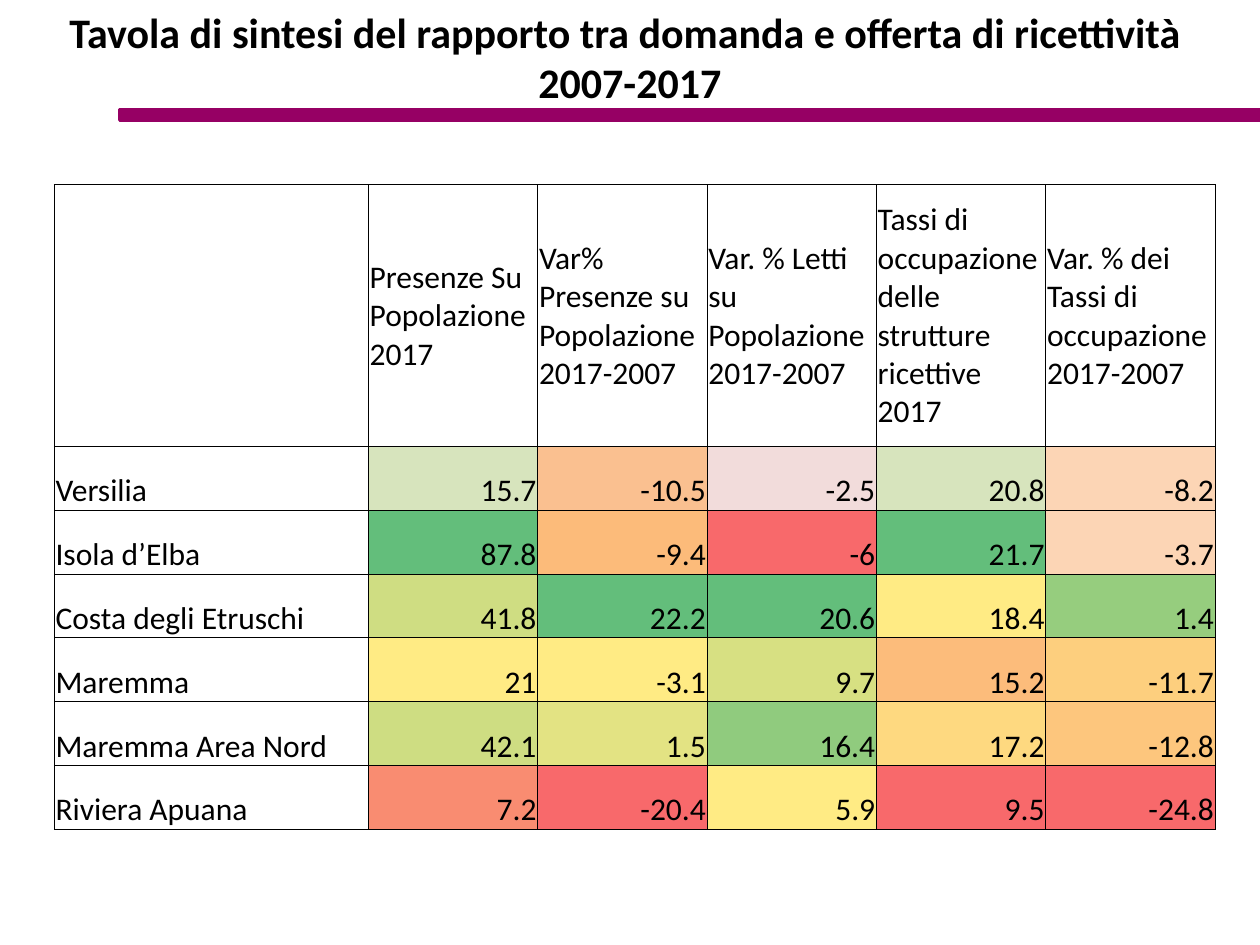
from dataclasses import dataclass

from lxml.etree import SubElement
from pptx import Presentation
from pptx.dml.color import RGBColor
from pptx.enum.shapes import MSO_SHAPE
from pptx.enum.text import MSO_ANCHOR, PP_ALIGN
from pptx.oxml.ns import qn
from pptx.util import Pt


@dataclass(frozen=True)
class Theme:
    font: str = "Calibri"
    ink: str = "000000"
    accent: str = "960064"
    title_size: int = 24
    body_size: int = 18
    border: float = 0.5
    accent_line: float = 2


HEADINGS = [
    "",
    "Presenze Su Popolazione 2017",
    "Var% Presenze su Popolazione 2017-2007",
    "Var. % Letti su Popolazione 2017-2007",
    "Tassi di occupazione delle strutture ricettive 2017",
    "Var. % dei Tassi di occupazione 2017-2007",
]

AREAS = {
    "Versilia": [("15.7", "D7E4BD"), ("-10.5", "FAC090"), ("-2.5", "F2DCDB"),
                 ("20.8", "D7E4BD"), ("-8.2", "FCD5B5")],
    "Isola d’Elba": [("87.8", "63BE7B"), ("-9.4", "FCBB7A"), ("-6", "F8696B"),
                     ("21.7", "63BE7B"), ("-3.7", "FCD5B5")],
    "Costa degli Etruschi": [("41.8", "CFDD82"), ("22.2", "63BE7B"), ("20.6", "63BE7B"),
                             ("18.4", "FFEB84"), ("1.4", "96CD7E")],
    "Maremma": [("21", "FFEB84"), ("-3.1", "FFEB84"), ("9.7", "D7E082"),
                ("15.2", "FCBC7B"), ("-11.7", "FDCF7E")],
    "Maremma Area Nord": [("42.1", "CEDD82"), ("1.5", "E3E383"), ("16.4", "90CB7E"),
                          ("17.2", "FED980"), ("-12.8", "FDC67D")],
    "Riviera Apuana": [("7.2", "F98C71"), ("-20.4", "F8696B"), ("5.9", "FFEB84"),
                       ("9.5", "F8696B"), ("-24.8", "F8696B")],
}


def write(frame, text, *, font, size, color, bold=False, align=PP_ALIGN.LEFT):
    for index, line in enumerate(text.split("\n")):
        paragraph = frame.add_paragraph() if index else frame.paragraphs[0]
        paragraph.alignment = align
        paragraph.font.size = Pt(size)
        if not line:
            continue
        run = paragraph.add_run()
        run.text = line
        run.font.name = font
        run.font.size = Pt(size)
        run.font.bold = bold
        run.font.color.rgb = RGBColor.from_string(color)


class SummarySlide:
    def __init__(self, slide, theme):
        self.slide = slide
        self.theme = theme

    def bar(self, left, top, width, height):
        rule = self.slide.shapes.add_shape(
            MSO_SHAPE.RECTANGLE, Pt(left), Pt(top), Pt(width), Pt(height))
        rule.shadow.inherit = False
        accent = RGBColor.from_string(self.theme.accent)
        rule.fill.solid()
        rule.fill.fore_color.rgb = accent
        rule.line.color.rgb = accent
        rule.line.width = Pt(self.theme.accent_line)

    def title(self, text, left, top, width, height):
        heading = self.slide.shapes.add_textbox(Pt(left), Pt(top), Pt(width), Pt(height))
        heading.text_frame.word_wrap = True
        write(heading.text_frame, text, font=self.theme.font, size=self.theme.title_size,
              color=self.theme.ink, bold=True, align=PP_ALIGN.CENTER)

    def table(self, rows, left, top, widths, heights):
        grid = self.slide.shapes.add_table(
            len(rows), len(widths), Pt(left), Pt(top), Pt(sum(widths)), Pt(sum(heights))).table
        grid.first_row = False
        grid.horz_banding = False
        for column, width in zip(grid.columns, widths):
            column.width = Pt(width)
        for row, height, entries in zip(grid.rows, heights, rows):
            row.height = Pt(height)
            for cell, entry in zip(row.cells, entries):
                self.cell(cell, **entry)

    def cell(self, cell, text, fill=None, anchor=MSO_ANCHOR.BOTTOM, align=PP_ALIGN.LEFT):
        cell.margin_left = cell.margin_right = cell.margin_top = Pt(0.75)
        cell.margin_bottom = Pt(0)
        cell.vertical_anchor = anchor
        self.borders(cell)
        if fill:
            cell.fill.solid()
            cell.fill.fore_color.rgb = RGBColor.from_string(fill)
        else:
            cell.fill.background()
        write(cell.text_frame, text, font=self.theme.font, size=self.theme.body_size,
              color=self.theme.ink, align=align)

    def borders(self, cell):
        properties = cell._tc.get_or_add_tcPr()
        for side in ("a:lnL", "a:lnR", "a:lnT", "a:lnB"):
            edge = SubElement(properties, qn(side), w=str(Pt(self.theme.border)))
            paint = SubElement(edge, qn("a:solidFill"))
            SubElement(paint, qn("a:srgbClr"), val=self.theme.ink)


def main():
    presentation = Presentation()
    presentation.slide_width, presentation.slide_height = Pt(720), Pt(540)
    summary = SummarySlide(
        presentation.slides.add_slide(presentation.slide_layouts[6]), Theme())

    summary.bar(68.4, 62.7, 651.6, 5.8)
    summary.title("Tavola di sintesi del rapporto tra domanda e offerta di ricettività \n2007-2017",
                  0, 0, 720, 87)

    rows = [[{"text": heading, "anchor": MSO_ANCHOR.MIDDLE} for heading in HEADINGS]]
    for area, values in AREAS.items():
        rows.append([{"text": area}] + [
            {"text": value, "fill": shade, "align": PP_ALIGN.RIGHT} for value, shade in values])
    summary.table(rows, 31, 105.5, [179.5] + [96.8] * 5, [149.5] + [36.5] * len(AREAS))

    presentation.save("out.pptx")


if __name__ == "__main__":
    main()
